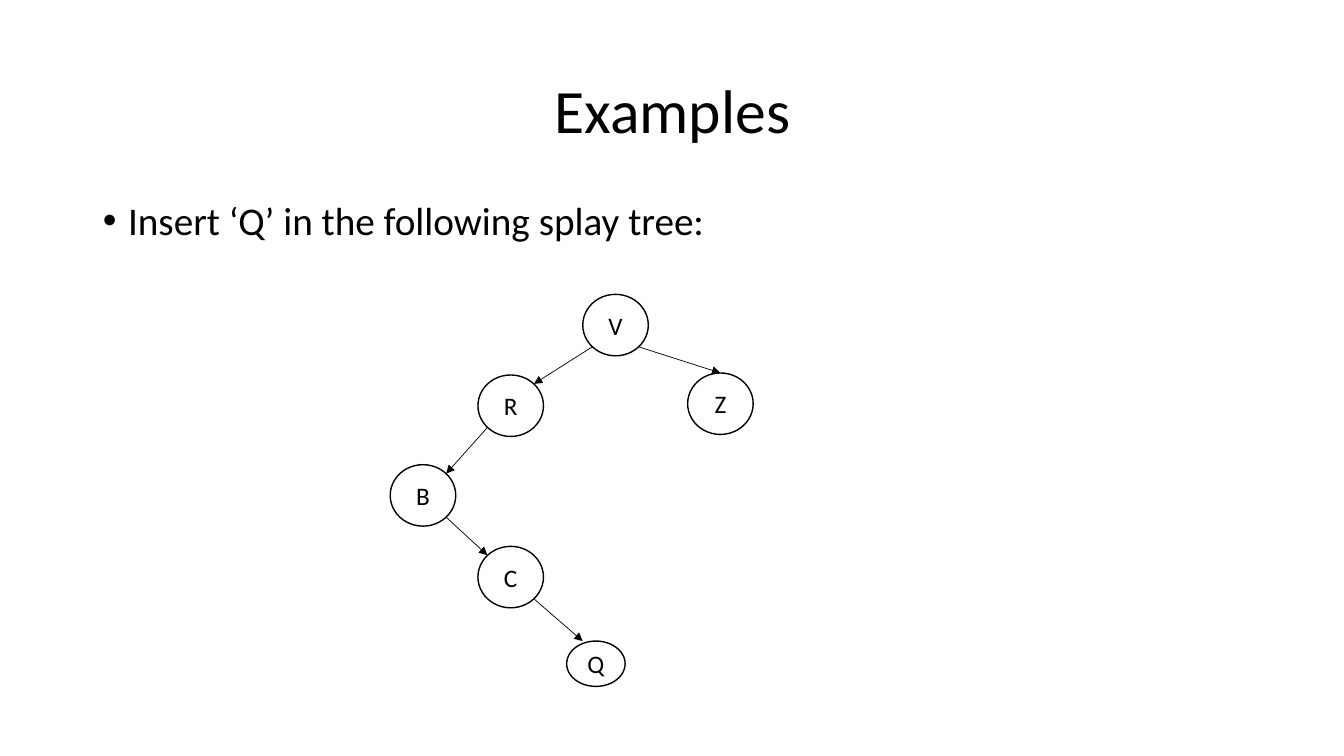
from dataclasses import dataclass

from lxml.etree import SubElement
from pptx import Presentation
from pptx.dml.color import RGBColor
from pptx.enum.shapes import MSO_CONNECTOR, MSO_SHAPE
from pptx.enum.text import MSO_ANCHOR, MSO_AUTO_SIZE, PP_ALIGN
from pptx.oxml.ns import qn
from pptx.slide import Slide
from pptx.text.text import TextFrame
from pptx.util import Inches, Pt

BLACK = RGBColor(0, 0, 0)
FONT = "Calibri"
DIAGONAL = 0.71
TOP = (0, -1)
TOP_LEFT = (-DIAGONAL, -DIAGONAL)
TOP_RIGHT = (DIAGONAL, -DIAGONAL)
BOTTOM_LEFT = (-DIAGONAL, DIAGONAL)
BOTTOM_RIGHT = (DIAGONAL, DIAGONAL)
ABOVE_LEFT = (-0.45, -1)


@dataclass(frozen=True)
class Node:
    key: str
    left: float
    top: float
    width: float = 0.65
    height: float = 0.61

    def point(self, site: tuple[float, float]) -> tuple[int, int]:
        x = self.left + self.width / 2 * (1 + site[0])
        y = self.top + self.height / 2 * (1 + site[1])
        return Inches(x), Inches(y)


@dataclass(frozen=True)
class Edge:
    parent: str
    start: tuple[float, float]
    child: str
    end: tuple[float, float]


NODES = [
    Node("V", 5.78, 2.92),
    Node("R", 4.74, 3.72),
    Node("Z", 6.82, 3.7),
    Node("B", 3.87, 4.61),
    Node("C", 4.74, 5.42),
    Node("Q", 5.62, 6.36, 0.58, 0.45),
]
EDGES = [
    Edge("V", BOTTOM_LEFT, "R", TOP_RIGHT),
    Edge("V", BOTTOM_RIGHT, "Z", TOP),
    Edge("R", BOTTOM_LEFT, "B", TOP_RIGHT),
    Edge("B", BOTTOM_RIGHT, "C", TOP_LEFT),
    Edge("C", BOTTOM_RIGHT, "Q", ABOVE_LEFT),
]


def write(tf: TextFrame, text: str, size: float, align: PP_ALIGN, anchor: MSO_ANCHOR) -> None:
    tf.text = text
    tf.word_wrap = True
    tf.auto_size = MSO_AUTO_SIZE.NONE
    tf.vertical_anchor = anchor
    p = tf.paragraphs[0]
    p.alignment = align
    font = p.runs[0].font
    font.name = FONT
    font.size = Pt(size)
    font.color.rgb = BLACK


def add_title(s: Slide, text: str) -> None:
    sp = s.shapes.title
    sp.left, sp.top, sp.width, sp.height = map(Inches, (0.92, 0.4, 11.5, 1.45))
    write(sp.text_frame, text, 44, PP_ALIGN.CENTER, MSO_ANCHOR.MIDDLE)
    sp.text_frame.paragraphs[0].line_spacing = 0.9


def add_body(s: Slide, text: str) -> None:
    sp = s.placeholders[1]
    sp.left, sp.top, sp.width, sp.height = map(Inches, (0.92, 1.95, 11.5, 4.76))
    write(sp.text_frame, text, 28, PP_ALIGN.LEFT, MSO_ANCHOR.TOP)
    p = sp.text_frame.paragraphs[0]
    p.line_spacing = 0.9
    p.space_before = Pt(10)
    props = p._p.get_or_add_pPr()
    props.set("marL", str(Inches(0.25)))
    props.set("indent", str(Inches(-0.25)))
    SubElement(props, qn("a:buFont"), typeface="Arial")
    SubElement(props, qn("a:buChar"), char="•")


def add_node(s: Slide, node: Node) -> None:
    box = map(Inches, (node.left, node.top, node.width, node.height))
    sp = s.shapes.add_shape(MSO_SHAPE.OVAL, *box)
    sp.shadow.inherit = False
    sp.fill.background()
    sp.line.color.rgb = BLACK
    sp.line.width = Pt(1)
    write(sp.text_frame, node.key, 18, PP_ALIGN.CENTER, MSO_ANCHOR.MIDDLE)


def add_edge(s: Slide, edge: Edge, nodes: dict[str, Node]) -> None:
    start = nodes[edge.parent].point(edge.start)
    end = nodes[edge.child].point(edge.end)
    arrow = s.shapes.add_connector(MSO_CONNECTOR.STRAIGHT, *start, *end)
    arrow.line.color.rgb = BLACK
    arrow.line.width = Pt(0.5)
    SubElement(arrow.line._get_or_add_ln(), qn("a:tailEnd"), type="triangle")
    SubElement(arrow._element.spPr, qn("a:effectLst"))


def main() -> None:
    prs = Presentation()
    prs.slide_width = Inches(13.33)
    prs.slide_height = Inches(7.5)
    s = prs.slides.add_slide(prs.slide_layouts[1])
    add_title(s, "Examples")
    add_body(s, "Insert ‘Q’ in the following splay tree:")
    for node in NODES:
        add_node(s, node)
    nodes = {node.key: node for node in NODES}
    for edge in EDGES:
        add_edge(s, edge, nodes)
    prs.save("out.pptx")


if __name__ == "__main__":
    main()
